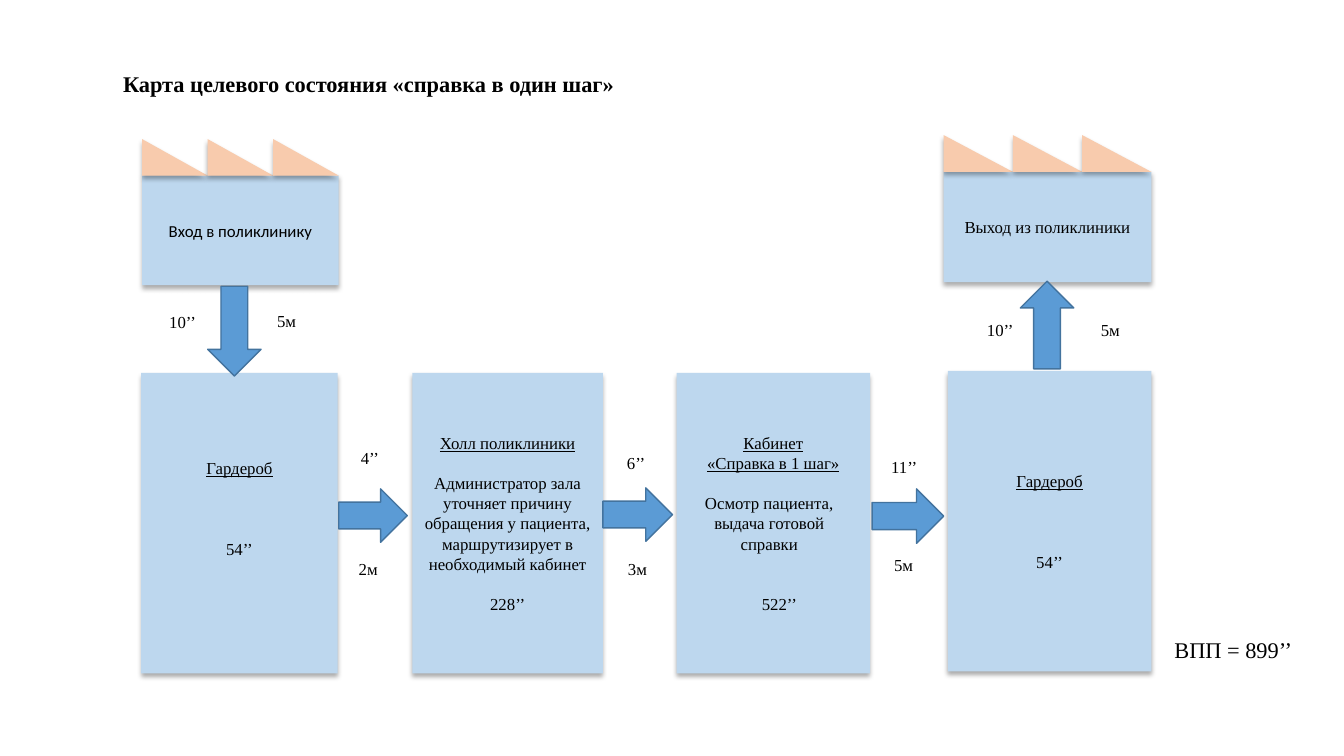
from dataclasses import dataclass

from lxml.etree import SubElement
from pptx import Presentation
from pptx.dml.color import RGBColor
from pptx.enum.shapes import MSO_SHAPE
from pptx.enum.text import MSO_ANCHOR, PP_ALIGN
from pptx.oxml.ns import qn
from pptx.util import Inches, Pt

GRID = Inches(0.1)


@dataclass(frozen=True)
class Theme:
    """Colours, fonts and type sizes of the map."""
    room: RGBColor = RGBColor(0xBD, 0xD7, 0xEE)
    roof: RGBColor = RGBColor(0xF8, 0xCB, 0xAD)
    arrow: RGBColor = RGBColor(0x5B, 0x9B, 0xD5)
    arrow_edge: RGBColor = RGBColor(0x43, 0x73, 0x9E)
    ink: RGBColor = RGBColor(0, 0, 0)
    serif: str = "Times New Roman"
    sans: str = "Calibri"
    body: float = 12
    large: float = 16
    line: float = 14.4


THEME = Theme()


@dataclass(frozen=True)
class Box:
    """A rectangle in grid columns and rows."""
    left: float
    top: float
    width: float
    height: float

    def emu(self):
        """Return the rectangle in slide units."""
        return [round(side * GRID) for side in (self.left, self.top, self.width, self.height)]


@dataclass(frozen=True)
class Line:
    """A paragraph with the free lines above it and its side indents."""
    text: str
    gap: int = 0
    underline: bool = False
    left: float = 0
    right: float = 0


def style(paragraph, size=THEME.body, face=THEME.serif):
    """Set the font of a paragraph."""
    paragraph.font.size = Pt(size)
    paragraph.font.name = face
    paragraph.font.color.rgb = THEME.ink


def write_lines(frame, lines, face=THEME.serif):
    """Write centred lines in the middle of a room."""
    frame.word_wrap = True
    frame.vertical_anchor = MSO_ANCHOR.MIDDLE
    for index, line in enumerate(lines):
        paragraph = frame.add_paragraph() if index else frame.paragraphs[0]
        paragraph.text = line.text
        paragraph.alignment = PP_ALIGN.CENTER
        properties = paragraph._p.get_or_add_pPr()
        properties.set("marL", str(round(line.left * GRID)))
        properties.set("marR", str(round(line.right * GRID)))
        if line.gap:
            paragraph.space_before = Pt(line.gap * THEME.line)
        style(paragraph, face=face)
        paragraph.font.underline = line.underline


def add_block(slide, preset, box, color):
    """Add a borderless shape with a soft shadow below it."""
    block = slide.shapes.add_shape(preset, *box.emu())
    block.fill.solid()
    block.fill.fore_color.rgb = color
    block.line.fill.background()
    block.shadow.inherit = False
    effects = block._element.spPr.find(qn("a:effectLst"))
    shadow = SubElement(effects, qn("a:outerShdw"), blurRad=str(Pt(3.5)),
                        dist=str(Pt(2.2)), dir="5400000", rotWithShape="0")
    tint = SubElement(shadow, qn("a:srgbClr"), val="000000")
    SubElement(tint, qn("a:alpha"), val="32000")
    return block


def add_label(slide, box, text, size=THEME.body):
    """Add a short left-aligned label."""
    frame = slide.shapes.add_textbox(*box.emu()).text_frame
    frame.word_wrap = True
    frame.text = text
    style(frame.paragraphs[0], size)


def add_title(slide, box, text):
    """Place the slide title."""
    title = slide.shapes.title
    title.left, title.top, title.width, title.height = box.emu()
    frame = title.text_frame
    frame.text = text
    frame.vertical_anchor = MSO_ANCHOR.MIDDLE
    heading = frame.paragraphs[0]
    heading.alignment = PP_ALIGN.LEFT
    heading.line_spacing = 0.9
    style(heading, THEME.large)
    heading.font.bold = True


def add_clinic(slide, box, text, face, teeth=3):
    """Draw a building: a wall on three quarters of the box under a toothed roof."""
    roof, tooth = box.height / 4, box.width / teeth
    wall = add_block(slide, MSO_SHAPE.RECTANGLE,
                     Box(box.left, box.top + roof, box.width, box.height - roof), THEME.room)
    write_lines(wall.text_frame, [Line(text)], face)
    for index in range(teeth):
        add_block(slide, MSO_SHAPE.RIGHT_TRIANGLE,
                  Box(box.left + index * tooth, box.top, tooth, roof), THEME.roof)


def add_room(slide, box, lines, lift=0):
    """Draw a room with its name, its work and its time."""
    room = add_block(slide, MSO_SHAPE.RECTANGLE, box, THEME.room)
    write_lines(room.text_frame, lines)
    room.text_frame.margin_bottom += round(lift * GRID)


def add_passage(slide, box, preset, time, time_at, distance, distance_at):
    """Draw an arrow with its time and distance labels offset from its corner."""
    arrow = slide.shapes.add_shape(preset, *box.emu())
    arrow.shadow.inherit = False
    arrow.fill.solid()
    arrow.fill.fore_color.rgb = THEME.arrow
    arrow.line.color.rgb = THEME.arrow_edge
    arrow.line.width = Pt(1)
    for text, (across, down) in ((time, time_at), (distance, distance_at)):
        add_label(slide, Box(box.left + across, box.top + down, 6, 3), text)


def add_map(slide):
    """Lay out the whole patient route."""
    cloakroom = [Line("Гардероб", underline=True), Line("54’’", gap=3)]
    hall = [
        Line("Холл поликлиники", underline=True),
        Line("Администратор зала", gap=1),
        Line("уточняет причину обращения у пациента, маршрутизирует в необходимый кабинет"),
        Line("228’’", gap=1),
    ]
    office = [
        Line("Кабинет", underline=True),
        Line("«Справка в 1 шаг»", underline=True),
        Line("Осмотр пациента, выдача готовой справки", gap=1, right=0.8),
        Line("522’’", gap=2, left=1.2),
    ]
    add_room(slide, Box(14, 37, 19.5, 29.8), cloakroom, lift=2.9)
    add_room(slide, Box(40.9, 37, 18.9, 29.8), hall)
    add_room(slide, Box(67.1, 37, 19.2, 29.8), office)
    add_room(slide, Box(94, 36.8, 20.2, 29.8), cloakroom)

    add_clinic(slide, Box(14.1, 13.8, 19.5, 14.5), "Вход в поликлинику", THEME.sans)
    add_clinic(slide, Box(93.6, 13.4, 20.6, 14.6), "Выход из поликлиники", THEME.serif)

    down, up, right = MSO_SHAPE.DOWN_ARROW, MSO_SHAPE.UP_ARROW, MSO_SHAPE.RIGHT_ARROW
    add_passage(slide, Box(20.6, 28.4, 5.3, 8.9), down, "10’’", (-4.8, 2), "5м", (5.9, 1.9))
    add_passage(slide, Box(33.6, 48.5, 6.8, 5.3), right, "4’’", (1.2, -4.6), "2м", (1, 6.4))
    add_passage(slide, Box(59.8, 48.4, 6.9, 5.3), right, "6’’", (1.4, -4), "3м", (1.5, 6.5))
    add_passage(slide, Box(86.5, 48.5, 7.1, 5.4), right, "11’’", (0.9, -3.7), "5м", (1.2, 6))
    add_passage(slide, Box(101.2, 27.9, 5.3, 8.7), up, "10’’", (-4.3, 3.3), "5м", (7, 3.3))


def main():
    """Build and save the slide."""
    deck = Presentation()
    deck.slide_width, deck.slide_height = Inches(13.33), Inches(7.5)
    slide = deck.slides.add_slide(deck.slide_layouts[5])
    add_title(slide, Box(11.2, 6.4, 106.3, 4.1), "Карта целевого состояния «справка в один шаг»")
    add_map(slide)
    add_label(slide, Box(115.5, 62.6, 15, 3.7), "ВПП = 899’’", THEME.large)
    deck.save("out.pptx")


if __name__ == "__main__":
    main()
